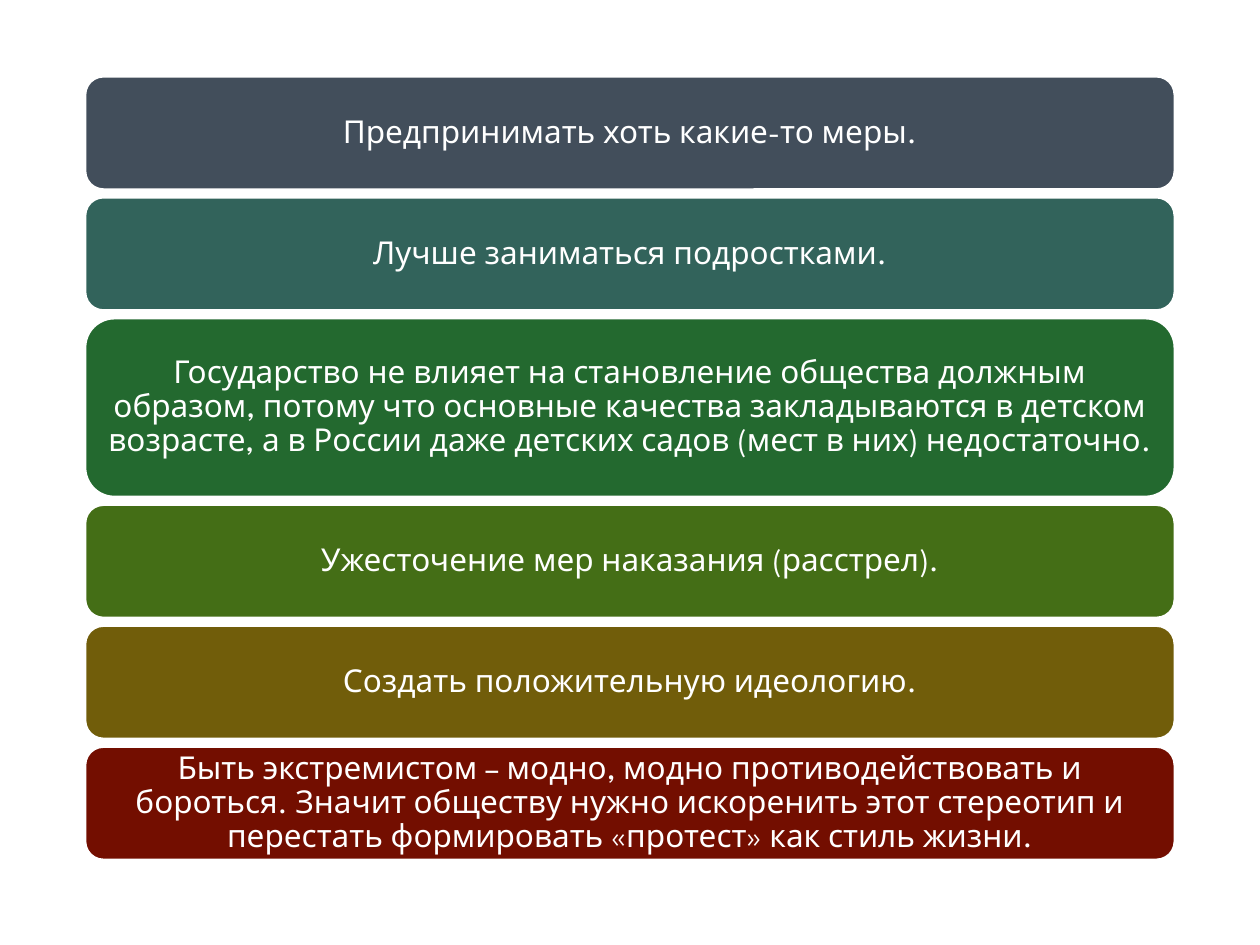
import pptx
import pptx.util
import pptx.dml.color
import pptx.enum.shapes
import pptx.enum.text
from dataclasses import dataclass

Inches = pptx.util.Inches
Pt = pptx.util.Pt


@dataclass(frozen=True)
class Theme:
    font: str = "League Spartan"
    size: int = 18
    white: str = "FFFFFF"
    slate: str = "424E5B"
    teal: str = "32635B"
    green: str = "23692F"
    olive: str = "446E16"
    gold: str = "715D0A"
    red: str = "730E00"


THEME = Theme()

# Stack of cards
LEFT, TOP, WIDTH, GAP = 0.67, 0.6, 8.66, 0.05
LOW, TALL = 0.91, 1.43

# Card text, fill and height
CARDS = [
    ("Предпринимать хоть какие-то меры.", THEME.slate, LOW),
    ("Лучше заниматься подростками.", THEME.teal, LOW),
    ("Государство не влияет на становление общества должным образом, "
     "потому что основные качества закладываются в детском возрасте, "
     "а в России даже детских садов (мест в них) недостаточно.",
     THEME.green, TALL),
    ("Ужесточение мер наказания (расстрел).", THEME.olive, LOW),
    ("Создать положительную идеологию.", THEME.gold, LOW),
    ("Быть экстремистом – модно, модно противодействовать и бороться. "
     "Значит обществу нужно искоренить этот стереотип и перестать "
     "формировать «протест» как стиль жизни.", THEME.red, LOW),
]


def color(code):
    return pptx.dml.color.RGBColor.from_string(code)


def add_text(shape, text):
    frame = shape.text_frame
    frame.word_wrap = True
    frame.vertical_anchor = pptx.enum.text.MSO_ANCHOR.MIDDLE
    frame.margin_left = frame.margin_right = Inches(0.07)
    frame.margin_top = frame.margin_bottom = Inches(0.04)
    para = frame.paragraphs[0]
    para.alignment = pptx.enum.text.PP_ALIGN.CENTER
    para.line_spacing = 0.9
    run = para.add_run()
    run.text = text
    run.font.name = THEME.font
    run.font.size = Pt(THEME.size)
    run.font.color.rgb = color(THEME.white)


def add_card(slide, top, height, fill, text):
    card = slide.shapes.add_shape(
        pptx.enum.shapes.MSO_SHAPE.ROUNDED_RECTANGLE,
        Inches(LEFT), Inches(top), Inches(WIDTH), Inches(height))
    card.shadow.inherit = False
    card.fill.solid()
    card.fill.fore_color.rgb = color(fill)
    card.line.color.rgb = color(THEME.white)
    card.line.width = Pt(2.25)
    add_text(card, text)


def main():
    deck = pptx.Presentation()
    deck.slide_width, deck.slide_height = Inches(10), Inches(7.5)
    slide = deck.slides.add_slide(deck.slide_layouts[6])

    # Cards from top to bottom
    top = TOP
    for text, fill, height in CARDS:
        add_card(slide, top, height, fill, text)
        top += height + GAP

    deck.save("out.pptx")


if __name__ == "__main__":
    main()
